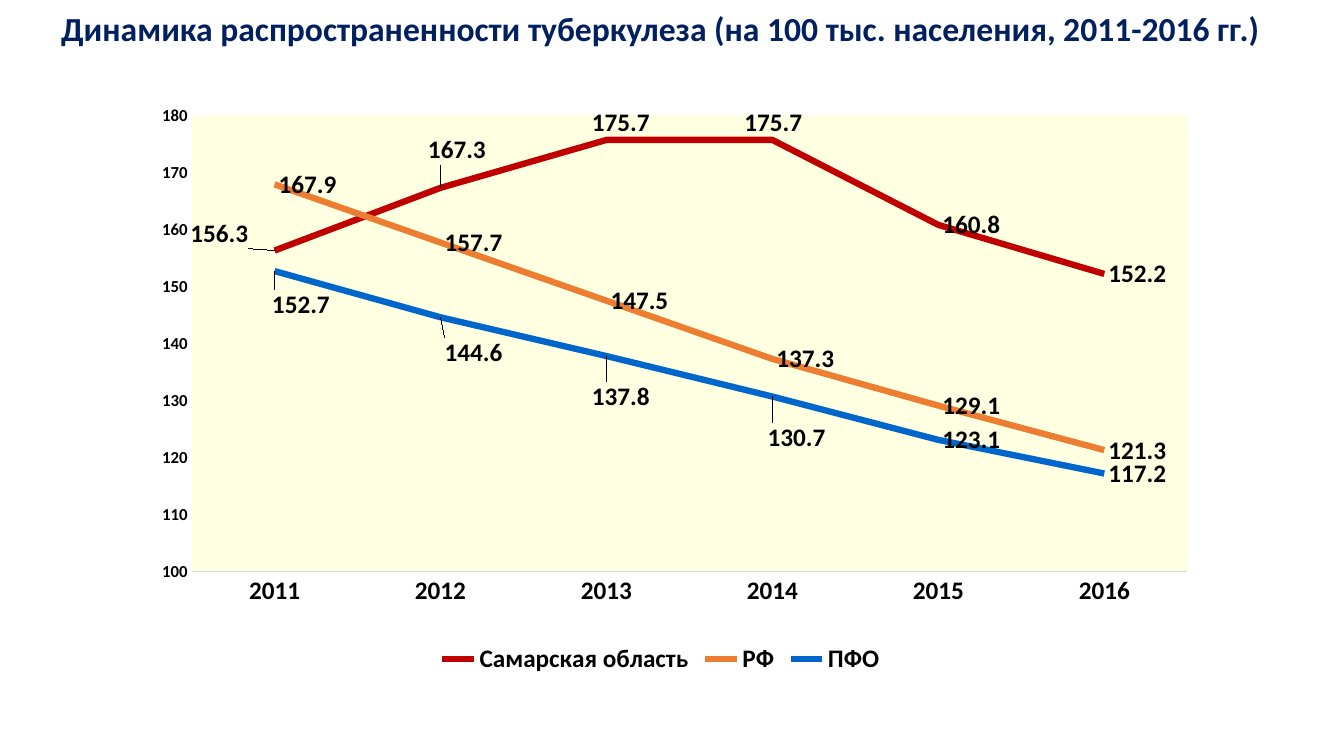
from dataclasses import dataclass

from lxml import etree
from pptx import Presentation
from pptx.chart.data import CategoryChartData
from pptx.dml.color import RGBColor
from pptx.enum.chart import XL_CHART_TYPE, XL_LABEL_POSITION, XL_LEGEND_POSITION, XL_TICK_MARK
from pptx.enum.text import MSO_ANCHOR, PP_ALIGN
from pptx.oxml.ns import qn
from pptx.util import Pt

LINE_CHART = XL_CHART_TYPE.LINE
LABEL_RIGHT = XL_LABEL_POSITION.RIGHT
LEGEND_BOTTOM = XL_LEGEND_POSITION.BOTTOM
NO_TICKS = XL_TICK_MARK.NONE
MIDDLE = MSO_ANCHOR.MIDDLE
CENTER = PP_ALIGN.CENTER


@dataclass(frozen=True)
class Theme:
    font: str = "Calibri"
    title_color: str = "002060"
    text_color: str = "000000"
    plot_fill: str = "FFFFE1"
    axis_line: str = "D9D9D9"
    region: str = "C00000"
    country: str = "ED7D31"
    district: str = "0066CC"
    title_size: int = 24
    label_size: int = 18
    scale_size: int = 12
    chart_size: int = 10
    series_width: float = 4.5


THEME = Theme()
YEARS = ["2011", "2012", "2013", "2014", "2015", "2016"]

# Name, colour, values, and label shifts as shares of the chart size
PREVALENCE = [
    ("Самарская область", THEME.region,
     [156.3, 167.3, 175.7, 175.7, 160.8, 152.2],
     [(-0.08, -0.03), (-0.015, -0.066), (-0.017, -0.031), (-0.029, -0.03)]),
    ("РФ", THEME.country,
     [167.9, 157.7, 147.5, 137.3, 129.1, 121.3], []),
    ("ПФО", THEME.district,
     [152.7, 144.6, 137.8, 130.7, 123.1, 117.2],
     [(-0.006, 0.059), (0, 0.062), (-0.017, 0.07), (-0.008, 0.071)]),
]


def manual_layout(**settings):
    """Build a chart layout element from its settings, in schema order."""
    layout = etree.Element(qn("c:layout"))
    manual = etree.SubElement(layout, qn("c:manualLayout"))
    for key, value in settings.items():
        etree.SubElement(manual, qn(f"c:{key}")).set("val", str(value))
    return layout


class SlideBuilder:
    def __init__(self, slide, theme):
        self.slide = slide
        self.theme = theme

    def style_font(self, font, size, color=None, bold=True):
        font.name = self.theme.font
        font.size = Pt(size)
        font.bold = bold
        font.color.rgb = RGBColor.from_string(color or self.theme.text_color)

    def title(self, text, left, top, width, height):
        frame = self.slide.shapes.add_textbox(
            Pt(left), Pt(top), Pt(width), Pt(height)).text_frame
        frame.word_wrap = True
        frame.margin_left = frame.margin_right = 0
        frame.vertical_anchor = MIDDLE
        frame.text = text
        heading = frame.paragraphs[0]
        heading.alignment = CENTER
        self.style_font(heading.runs[0].font, self.theme.title_size, self.theme.title_color)

    def line_chart(self, categories, rows, left, top, width, height):
        data = CategoryChartData(number_format="0.0")
        data.categories = categories
        for name, _, values, _ in rows:
            data.add_series(name, values)
        chart = self.slide.shapes.add_chart(
            LINE_CHART, Pt(left), Pt(top), Pt(width), Pt(height), data).chart
        chart.has_title = False
        self.style_font(chart.font, self.theme.chart_size, bold=False)
        chart.has_legend = True
        chart.legend.position = LEGEND_BOTTOM
        chart.legend.include_in_layout = False
        self.style_font(chart.legend.font, self.theme.label_size)
        for series, (_, color, _, shifts) in zip(chart.plots[0].series, rows):
            self.series(series, color, shifts)
        return chart

    def series(self, series, color, shifts):
        series.smooth = False
        series.format.line.width = Pt(self.theme.series_width)
        series.format.line.color.rgb = RGBColor.from_string(color)
        labels = series.data_labels
        labels.show_value = True
        labels.number_format = "0.0"
        labels.number_format_is_linked = False
        labels.position = LABEL_RIGHT
        self.style_font(labels.font, self.theme.label_size)
        for index, (x, y) in enumerate(shifts):
            label = series.points[index].data_label
            self.style_font(label.font, self.theme.label_size)
            label.position = LABEL_RIGHT
        for entry, (x, y) in zip(series._element.iter(qn("c:dLbl")), shifts):
            entry.find(qn("c:idx")).addnext(manual_layout(x=x, y=y))

    def axes(self, chart, low, high, step):
        years, scale = chart.category_axis, chart.value_axis
        sizes = (self.theme.label_size, self.theme.scale_size)
        for axis, size in zip((years, scale), sizes):
            axis.has_title = False
            axis.has_major_gridlines = False
            axis.major_tick_mark = axis.minor_tick_mark = NO_TICKS
            self.style_font(axis.tick_labels.font, size)
        years.format.line.width = Pt(0.75)
        years.format.line.color.rgb = RGBColor.from_string(self.theme.axis_line)
        scale.format.line.fill.background()
        scale.minimum_scale, scale.maximum_scale, scale.major_unit = low, high, step
        scale.tick_labels.number_format = "0"
        scale.tick_labels.number_format_is_linked = False

    def plot_area(self, chart, x, y, w, h):
        area = chart._chartSpace.find(f".//{qn('c:plotArea')}")
        for old in area.findall(qn("c:layout")):
            area.remove(old)
        area.insert(0, manual_layout(
            layoutTarget="inner", xMode="edge", yMode="edge", x=x, y=y, w=w, h=h))
        properties = etree.SubElement(area, qn("c:spPr"))
        fill = etree.SubElement(properties, qn("a:solidFill"))
        etree.SubElement(fill, qn("a:srgbClr")).set("val", self.theme.plot_fill)


def main():
    deck = Presentation()
    deck.slide_width, deck.slide_height = Pt(960), Pt(540)
    builder = SlideBuilder(deck.slides.add_slide(deck.slide_layouts[6]), THEME)

    # Heading
    builder.title(
        "Динамика распространенности туберкулеза (на 100 тыс. населения, 2011-2016 гг.)",
        36.5, 0, 870.5, 40.5)

    # Prevalence by year
    prevalence = builder.line_chart(YEARS, PREVALENCE, 77.75, 74.25, 788.5, 411)
    builder.axes(prevalence, 100, 180, 10)
    builder.plot_area(prevalence, 0.075, 0.02, 0.902, 0.793)

    deck.save("out.pptx")


if __name__ == "__main__":
    main()
